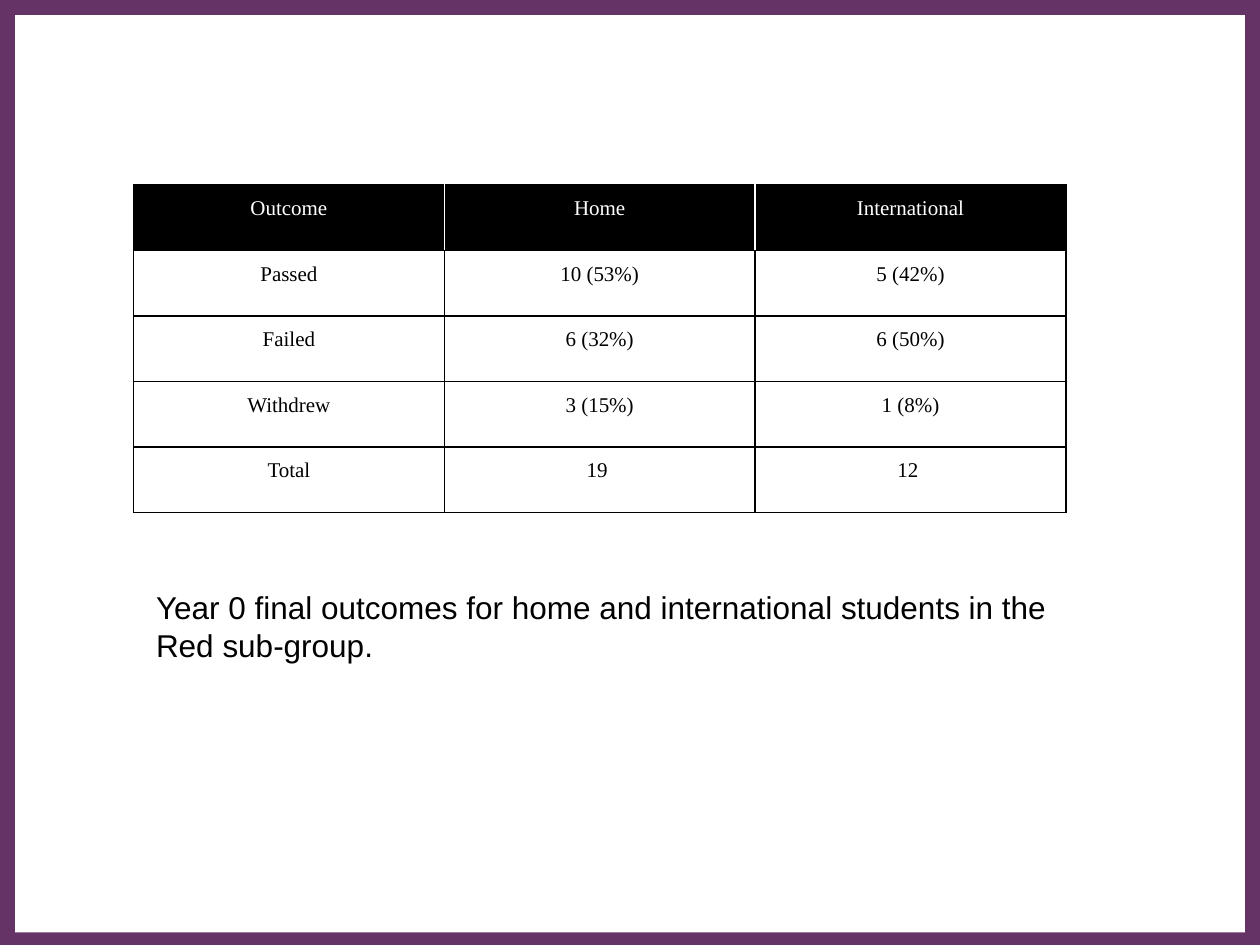
"""Build a slide with a table of student outcomes and its caption."""
from lxml import etree
from pptx import Presentation
from pptx.dml.color import RGBColor
from pptx.enum import shapes, text
from pptx.oxml.ns import qn
from pptx.util import Inches, Pt

PURPLE = RGBColor(0x66, 0x33, 0x66)
WHITE = RGBColor(0xFF, 0xFF, 0xFF)
BLACK = RGBColor(0, 0, 0)

OUTCOMES = [
    ("Outcome", "Home", "International"),
    ("Passed", "10 (53%)", "5 (42%)"),
    ("Failed", "6 (32%)", "6 (50%)"),
    ("Withdrew", "3 (15%)", "1 (8%)"),
    ("Total", "19 ", "12 "),
]
CAPTION = ("Year 0 final outcomes for home and international students "
           "in the Red sub-group.")
FRAMES = [((0, 0, 10, 7.52), PURPLE), ((0.12, 0.12, 9.76, 7.28), WHITE)]
TABLE_BOX = (1.06, 1.47, 7.4, 2.6)
CAPTION_BOX = (1.14, 4.62, 7.4, 0.71)


def inches(box):
    return [Inches(length) for length in box]


def add_frame(slide, box, color):
    frame = slide.shapes.add_shape(shapes.MSO_SHAPE.RECTANGLE, *inches(box))
    frame.shadow.inherit = False
    frame.fill.solid()
    frame.fill.fore_color.rgb = color
    frame.line.fill.background()


def set_borders(cell, colors):
    properties = cell._tc.get_or_add_tcPr()
    for position, (side, color) in enumerate(colors.items()):
        border = etree.Element(qn(f"a:ln{side}"), w=str(Pt(1)))
        fill = etree.SubElement(border, qn("a:solidFill"))
        etree.SubElement(fill, qn("a:srgbClr"), val=str(color))
        properties.insert(position, border)


def format_cell(cell, words, is_header, borders):
    cell.text = words
    cell.margin_left = cell.margin_right = Inches(0.07)
    cell.margin_top = cell.margin_bottom = 0
    cell.fill.solid()
    cell.fill.fore_color.rgb = BLACK if is_header else WHITE
    paragraph = cell.text_frame.paragraphs[0]
    paragraph.alignment = text.PP_ALIGN.CENTER
    paragraph.line_spacing = 1.5
    paragraph.font.name = "Times New Roman"
    paragraph.font.size = Pt(12)
    paragraph.font.color.rgb = WHITE if is_header else BLACK
    set_borders(cell, borders)


def add_outcomes(slide):
    row_count, column_count = len(OUTCOMES), len(OUTCOMES[0])
    table = slide.shapes.add_table(
        row_count, column_count, *inches(TABLE_BOX)).table
    for r, row in enumerate(OUTCOMES):
        for c, words in enumerate(row):
            is_header = r == 0
            borders = {
                "L": WHITE if is_header and c > 0 else BLACK,
                "R": WHITE if is_header and c < column_count - 1 else BLACK,
                "T": BLACK,
                "B": BLACK,
            }
            format_cell(table.cell(r, c), words, is_header, borders)


def add_caption(slide):
    frame = slide.shapes.add_textbox(*inches(CAPTION_BOX)).text_frame
    frame.word_wrap = True
    frame.auto_size = text.MSO_AUTO_SIZE.SHAPE_TO_FIT_TEXT
    frame.text = CAPTION
    font = frame.paragraphs[0].font
    font.name = "Arial"
    font.size = Pt(18)
    font.color.rgb = BLACK


def main():
    deck = Presentation()
    deck.slide_width, deck.slide_height = Inches(10), Inches(7.5)
    slide = deck.slides.add_slide(deck.slide_layouts[6])
    for box, color in FRAMES:
        add_frame(slide, box, color)
    add_outcomes(slide)
    add_caption(slide)
    deck.save("out.pptx")


if __name__ == "__main__":
    main()
